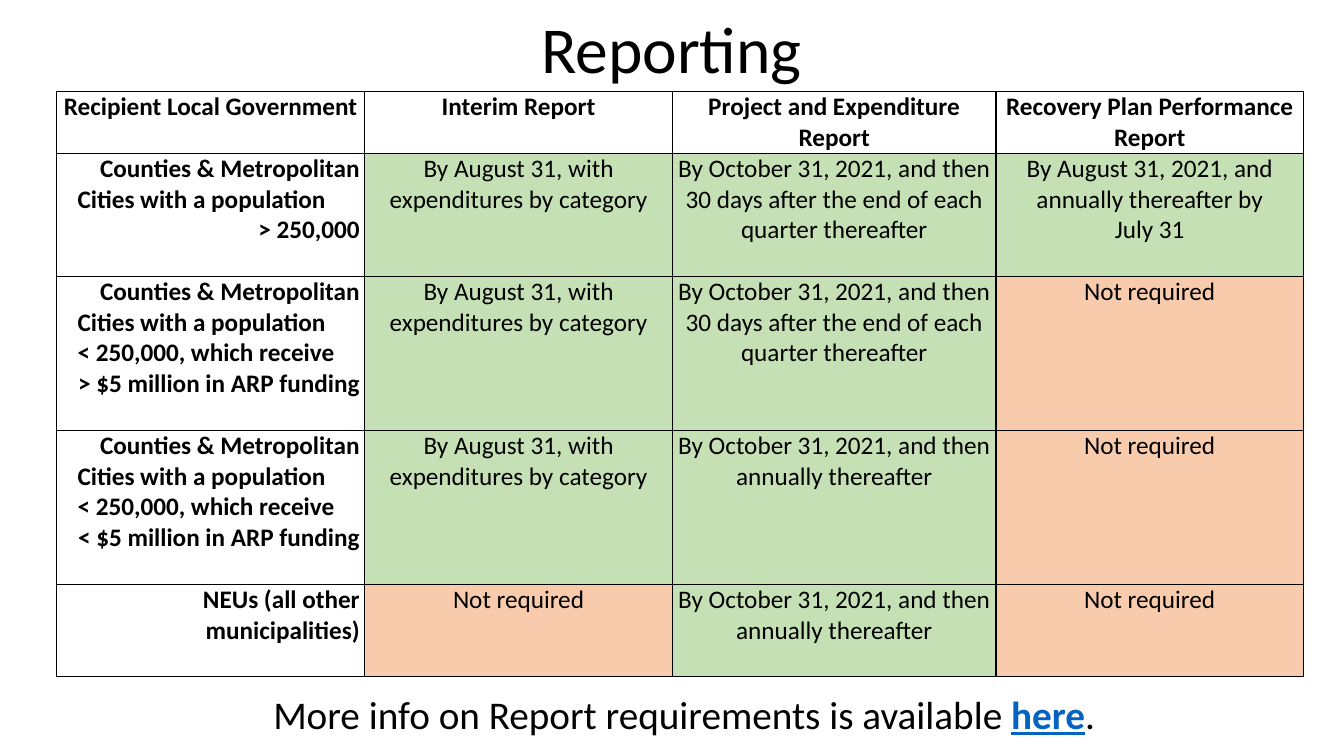
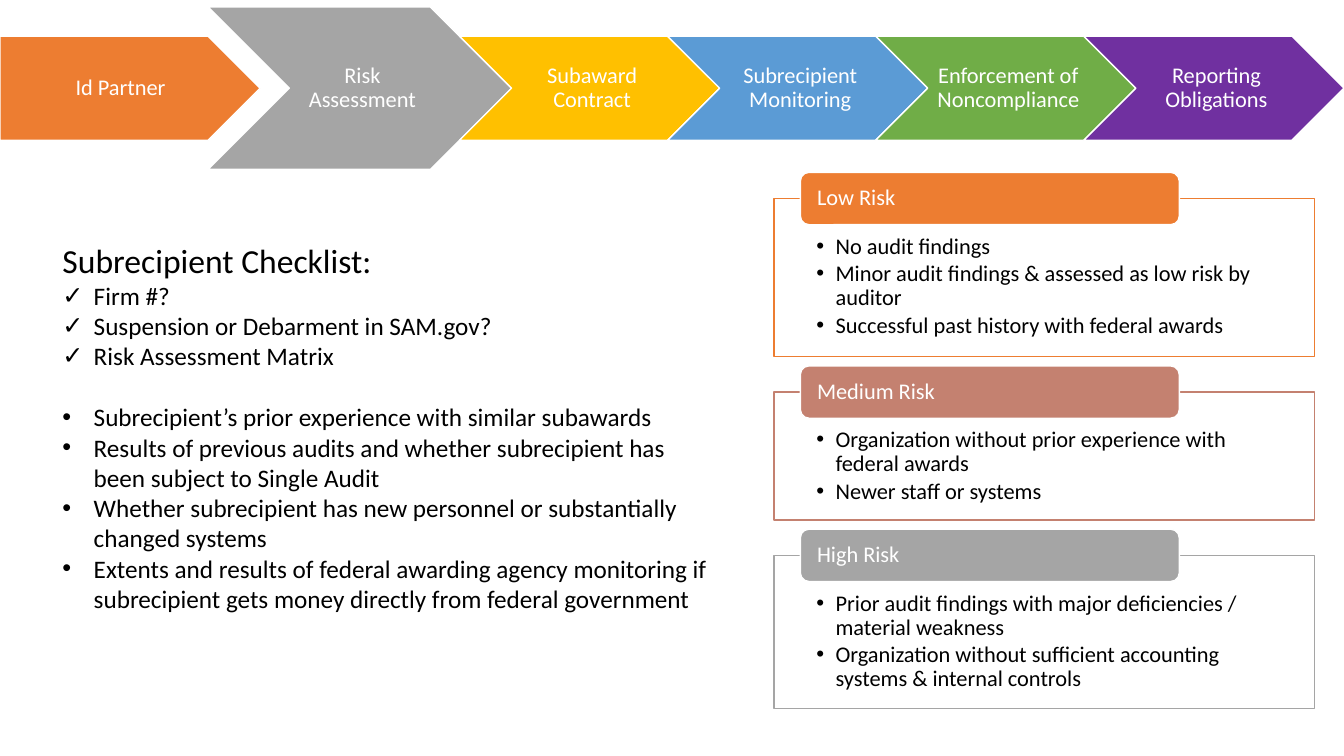
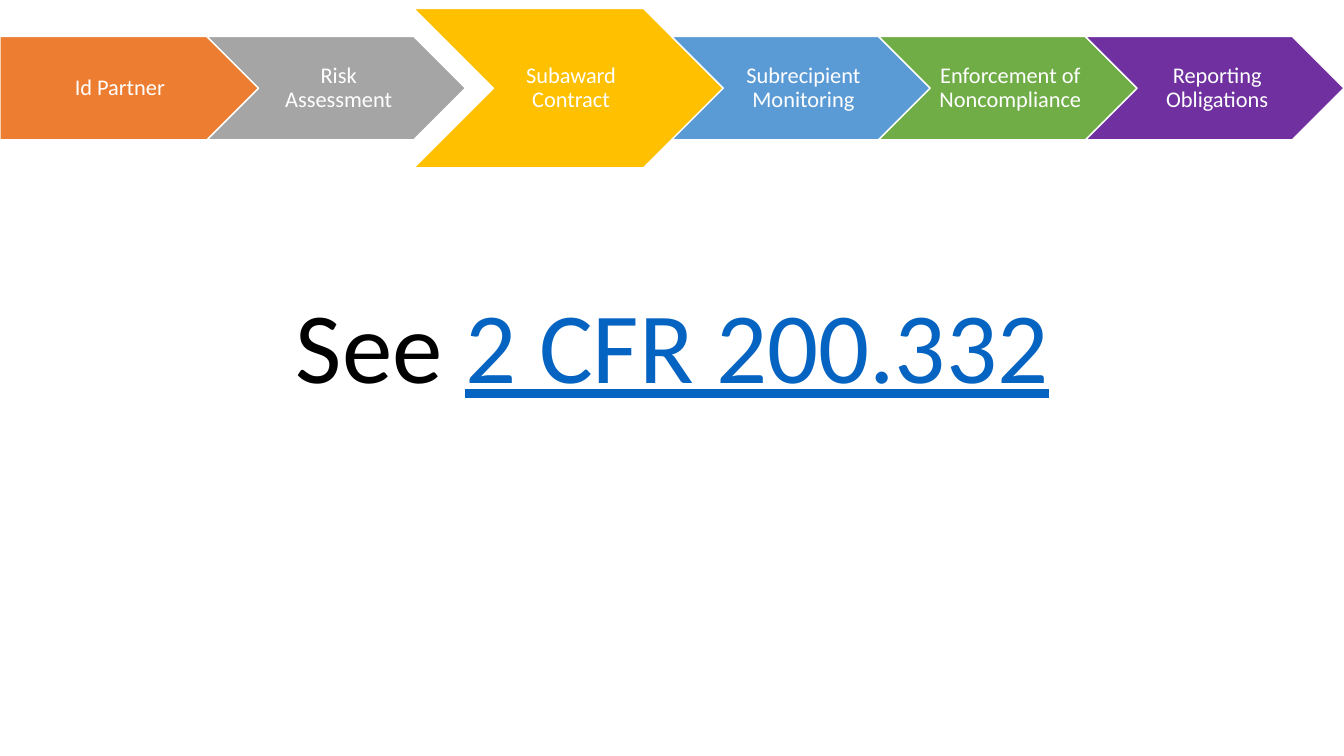
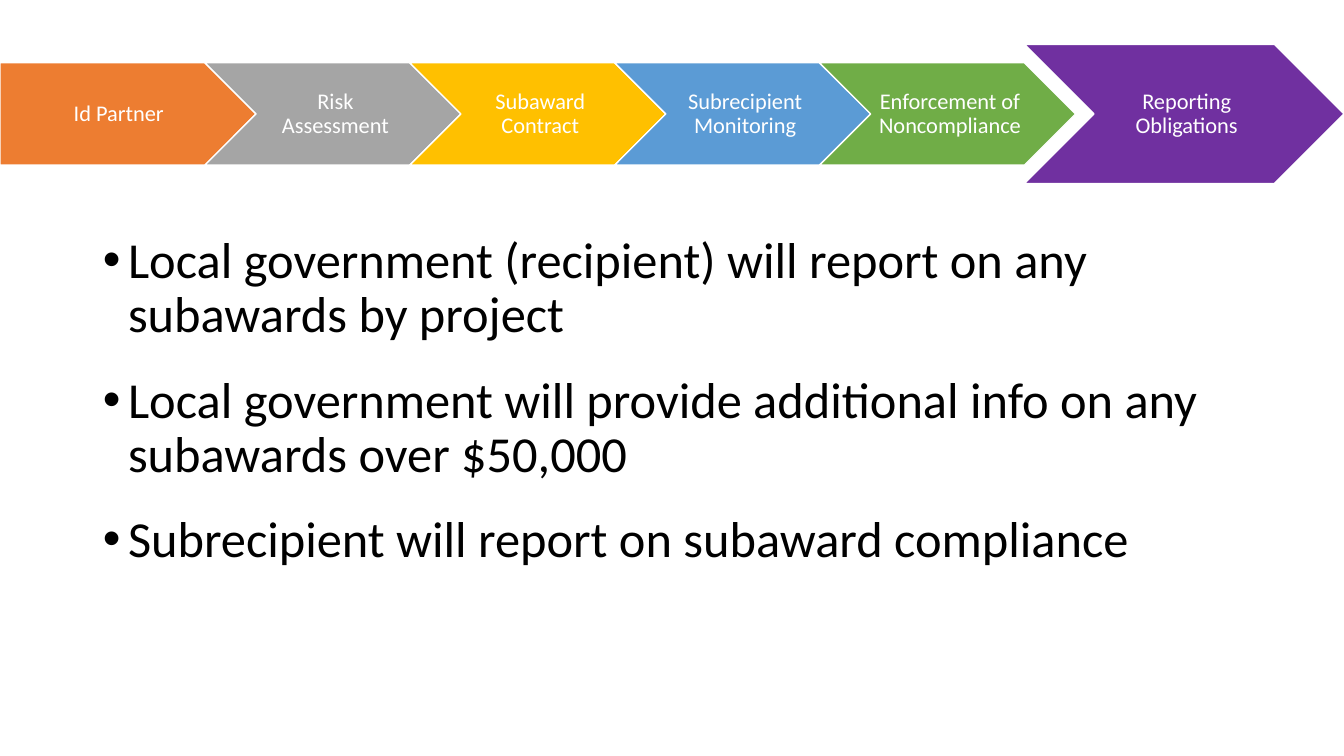
"""Builds four slides on grant reporting and subrecipient steps."""
from dataclasses import dataclass, replace

from lxml import etree
from pptx import Presentation
from pptx.dml.color import RGBColor
from pptx.enum.shapes import MSO_SHAPE
from pptx.enum.text import MSO_ANCHOR, MSO_AUTO_SIZE, PP_ALIGN
from pptx.oxml.ns import qn
from pptx.util import Emu, Inches, Pt

WIDE, HIGH = Inches(13.33), Inches(7.5)
RATIO = WIDE / HIGH
FONT = "Calibri"
BLACK, WHITE, LINK = "000000", "FFFFFF", "0563C1"
GREEN, PEACH = "C5E0B4", "F8CBAD"
ORANGE, GREY, ROSE = "ED7D31", "A5A5A5", "C48170"
LEFT, MID, RIGHT = PP_ALIGN.LEFT, PP_ALIGN.CENTER, PP_ALIGN.RIGHT
TOP, CENTRE = MSO_ANCHOR.TOP, MSO_ANCHOR.MIDDLE
PLATE, ARROW = MSO_SHAPE.PENTAGON, MSO_SHAPE.CHEVRON
RECT, ROUND = MSO_SHAPE.RECTANGLE, MSO_SHAPE.ROUNDED_RECTANGLE
FIXED = MSO_AUTO_SIZE.NONE
PAD = (0.1, 0.05, 0.1, 0.05)


@dataclass(frozen=True)
class Box:
    """Place in hundredths of the slide's width and height."""
    x: float
    y: float
    w: float
    h: float

    def emu(self) -> tuple[Emu, Emu, Emu, Emu]:
        """Give the place as slide lengths."""
        return across(self.x), down(self.y), across(self.w), down(self.h)


@dataclass(frozen=True)
class Style:
    """Look of one paragraph; gaps in points, indent in inches."""
    size: float
    color: str = BLACK
    bold: bool = False
    align: PP_ALIGN = LEFT
    lead: float = 1.0
    before: float = 0
    after: float = 0
    sign: str = ""
    indent: float = 0
    strong: bool = False


@dataclass(frozen=True)
class Line:
    """One paragraph; parts between bars look like links."""
    text: str
    style: Style


@dataclass(frozen=True)
class Step:
    """One arrow of the process row."""
    name: str
    color: str


@dataclass(frozen=True)
class Risk:
    """One risk card with its height in rows."""
    name: str
    color: str
    high: float
    items: tuple[str, ...]


STEPS = (
    Step("Id Partner", ORANGE),
    Step("Risk Assessment", GREY),
    Step("Subaward Contract", "FFC000"),
    Step("Subrecipient Monitoring", "5B9BD5"),
    Step("Enforcement of Noncompliance", "70AD47"),
    Step("Reporting Obligations", "7030A0"),
)
RISKS = (
    Risk("Low Risk", ORANGE, 20.93, (
        "No audit findings",
        "Minor audit findings & assessed as low risk by auditor",
        "Successful past history with federal awards")),
    Risk("Medium Risk", ROSE, 16.93, (
        "Organization without prior experience with federal awards",
        "Newer staff or systems")),
    Risk("High Risk", GREY, 20.27, (
        "Prior audit findings with major deficiencies / material weakness",
        "Organization without sufficient accounting systems & internal controls")),
)
CHECKS = ("Firm #?", "Suspension or Debarment in SAM.gov?", "Risk Assessment Matrix")
FACTORS = (
    "Subrecipient’s prior experience with similar subawards",
    "Results of previous audits and whether subrecipient has been subject to Single Audit",
    "Whether subrecipient has new personnel or substantially changed systems",
    "Extents and results of federal awarding agency monitoring if subrecipient "
    "gets money directly from federal government",
)
DUTIES = (
    "Local government (recipient) will report on any subawards by project",
    "Local government will provide additional info on any subawards over $50,000",
    "Subrecipient will report on subaward compliance",
)
COLS = (22.95, 22.88, 24.08, 22.88)
ROWS = (8.13, 16.27, 20.4, 20.4, 12.13)
HEADS = ("Recipient Local Government", "Interim Report",
         "Project and Expenditure Report", "Recovery Plan Performance Report")
NONE = "Not required"
AUGUST = "By August 31, with expenditures by category"
QUARTER = "By October 31, 2021, and then 30 days after the end of each quarter thereafter"
ANNUAL = "By October 31, 2021, and then annually thereafter"
PLAN = "By August 31, 2021, and annually thereafter by\vJuly 31"
CITIES = ("Counties & Metropolitan", "Cities with a population")
SMALL = CITIES + ("< 250,000, which receive",)
GRID = (
    (CITIES + ("> 250,000",), AUGUST, QUARTER, PLAN),
    (SMALL + ("> $5 million in ARP funding",), AUGUST, QUARTER, NONE),
    (SMALL + ("< $5 million in ARP funding",), AUGUST, ANNUAL, NONE),
    (("NEUs (all other municipalities)",), NONE, ANNUAL, NONE),
)


def across(share: float) -> Emu:
    """Turn hundredths of the width into a length."""
    return Emu(round(WIDE * share / 100))


def down(share: float) -> Emu:
    """Turn hundredths of the height into a length."""
    return Emu(round(HIGH * share / 100))


def rgb(code: str) -> RGBColor:
    """Turn a hex string into a colour."""
    return RGBColor.from_string(code)


def mark(par, style: Style) -> None:
    """Set the indent and bullet of a paragraph."""
    props = par._p.get_or_add_pPr()
    hang = -style.indent if style.sign else 0
    props.set("marL", str(Inches(style.indent)))
    props.set("indent", str(Inches(hang)))
    if style.sign:
        etree.SubElement(props, qn("a:buFont")).set("typeface", "Arial")
        etree.SubElement(props, qn("a:buChar")).set("char", style.sign)
    else:
        etree.SubElement(props, qn("a:buNone"))


def write(frame, lines: list[Line]) -> None:
    """Fill a text frame with styled paragraphs."""
    for i, line in enumerate(lines):
        par = frame.add_paragraph() if i else frame.paragraphs[0]
        style = line.style
        mark(par, style)
        par.alignment, par.line_spacing = style.align, style.lead
        par.space_before, par.space_after = Pt(style.before), Pt(style.after)
        font = par.font
        font.name, font.size, font.bold = FONT, Pt(style.size), style.bold
        font.color.rgb = rgb(style.color)
        if "|" not in line.text:
            par.text = line.text
            continue
        for j, part in enumerate(line.text.split("|")):
            if part:
                run = par.add_run()
                run.text = part
                if j % 2:
                    run.font.color.rgb = rgb(LINK)
                    run.font.underline = True
                    run.font.bold = style.strong


def fit(frame, pad: tuple[float, ...], anchor: MSO_ANCHOR) -> None:
    """Set wrapping, margins and anchor of a text frame."""
    frame.word_wrap, frame.auto_size = True, FIXED
    frame.vertical_anchor = anchor
    (frame.margin_left, frame.margin_top,
     frame.margin_right, frame.margin_bottom) = map(Inches, pad)


def block(shape, box: Box, lines: list[Line], anchor: MSO_ANCHOR = TOP) -> None:
    """Move and fill a placeholder or text box."""
    shape.left, shape.top, shape.width, shape.height = box.emu()
    fit(shape.text_frame, PAD, anchor)
    write(shape.text_frame, lines)


def form(slide, kind: MSO_SHAPE, box: Box, fill: str, edge: str,
         lines: list[Line], pad: tuple[float, ...], anchor: MSO_ANCHOR) -> None:
    """Draw a filled shape with its text."""
    shape = slide.shapes.add_shape(kind, *box.emu())
    shape.shadow.inherit = False
    shape.fill.solid()
    shape.fill.fore_color.rgb = rgb(fill)
    shape.line.color.rgb = rgb(edge)
    shape.line.width = Pt(1)
    fit(shape.text_frame, pad, anchor)
    write(shape.text_frame, lines)


def flow(slide, pick: int, wide: float, high: float, axis: float) -> None:
    """Draw the process row with one larger arrow."""
    base = (100 - wide) / 4
    left = 0.0
    style = Style(16, WHITE, align=MID, lead=0.9)
    for i, step in enumerate(STEPS):
        w, h = (wide, high) if i == pick else (base, 0.4 * base * RATIO)
        kind, edge = (ARROW, 0.07) if i else (PLATE, 0.09)
        form(slide, kind, Box(left, axis - h / 2, w, h), step.color, WHITE,
             [Line(step.name, style)], (edge, 0.05, 0.02, 0.05), CENTRE)
        left += w - 0.2 * base


def cards(slide) -> None:
    """Draw the risk cards one below the other."""
    item = Style(16, lead=0.9, after=2.4, sign="•", indent=0.19)
    label = Style(16, WHITE, lead=0.9)
    left, top, gap = 57.6, 26.27, 4.67
    for risk in RISKS:
        form(slide, RECT, Box(left, top, 40.2, risk.high), WHITE, risk.color,
             [Line(text, item) for text in risk.items],
             (0.42, 0.36, 0.42, 0.12), TOP)
        form(slide, ROUND, Box(left + 1.95, top - 3.47, 28.2, 6.93),
             risk.color, WHITE, [Line(risk.name, label)], (0.14, 0, 0.14, 0), CENTRE)
        top += risk.high + gap


def border(cell) -> None:
    """Give a cell thin black edges."""
    props = cell._tc.get_or_add_tcPr()
    for side in ("a:lnL", "a:lnR", "a:lnT", "a:lnB"):
        edge = etree.SubElement(props, qn(side), w=str(Pt(1)))
        fill = etree.SubElement(edge, qn("a:solidFill"))
        etree.SubElement(fill, qn("a:srgbClr"), val=BLACK)


def fill_cell(cell, lines: list[Line], fill: str) -> None:
    """Format and fill one table cell."""
    border(cell)
    cell.fill.solid()
    cell.fill.fore_color.rgb = rgb(fill)
    cell.margin_left = cell.margin_right = Inches(0.05)
    cell.margin_top = cell.margin_bottom = 0
    write(cell.text_frame, lines)


def label(texts: tuple[str, ...]) -> list[Line]:
    """Set outer lines to the right and inner ones on an indent."""
    outer = Style(18, bold=True, align=RIGHT)
    inner = replace(outer, align=LEFT, indent=0.16)
    ends = (0, len(texts) - 1)
    return [Line(text, outer if i in ends else inner)
            for i, text in enumerate(texts)]


def table(slide) -> None:
    """Draw the table of due dates."""
    box = Box(4.2, 12.13, sum(COLS), sum(ROWS))
    grid = slide.shapes.add_table(len(ROWS), len(COLS), *box.emu()).table
    grid.first_row = grid.horz_banding = False
    for col, share in zip(grid.columns, COLS):
        col.width = across(share)
    for row, share in zip(grid.rows, ROWS):
        row.height = down(share)
    plain = Style(18, align=MID)
    head = replace(plain, bold=True)
    for c, text in enumerate(HEADS):
        fill_cell(grid.cell(0, c), [Line(text, head)], WHITE)
    for r, (names, *dates) in enumerate(GRID, 1):
        fill_cell(grid.cell(r, 0), label(names), WHITE)
        for c, text in enumerate(dates, 1):
            fill_cell(grid.cell(r, c), [Line(text, plain)],
                      PEACH if text == NONE else GREEN)


def page(deck, box: Box, lines: list[Line]):
    """Add a slide whose body holds the lines and which has no title."""
    slide = deck.slides.add_slide(deck.slide_layouts[1])
    title = slide.shapes.title._element
    title.getparent().remove(title)
    block(slide.placeholders[1], box, lines)
    return slide


def report(deck) -> None:
    """Build the slide of reports and due dates."""
    slide = deck.slides.add_slide(deck.slide_layouts[5])
    block(slide.shapes.title, Box(6.83, 1.6, 86.25, 10.53),
          [Line("Reporting", Style(46.8, align=MID, lead=0.9))], CENTRE)
    table(slide)
    box = Box(4.2, 90.67, 93.4, 7.6)
    note = "More info on Report requirements is available |here|."
    block(slide.shapes.add_textbox(*box.emu()), box,
          [Line(note, Style(28, align=MID, strong=True))])


def assess(deck) -> None:
    """Build the slide of checks and risks."""
    tick = Style(18, sign="✓", indent=0.31)
    dot = replace(tick, sign="•")
    lines = [Line("Subrecipient Checklist:", Style(24))]
    lines += [Line(text, tick) for text in CHECKS]
    lines += [Line(text, dot if i else replace(dot, before=22))
              for i, text in enumerate(FACTORS)]
    slide = page(deck, Box(3.9, 31.07, 49.8, 51.2), lines)
    flow(slide, 1, 22.58, 21.47, 11.67)
    cards(slide)


def award(deck) -> None:
    """Build the slide that names the rule."""
    style = Style(72, align=MID, lead=0.9, before=10)
    slide = page(deck, Box(6.9, 38.53, 86.25, 51.47),
                 [Line("See |2 CFR 200.332|", style)])
    flow(slide, 2, 23.03, 21.07, 11.67)


def duty(deck) -> None:
    """Build the slide of reporting duties."""
    style = Style(36, lead=0.9, before=22, sign="•", indent=0.25)
    slide = page(deck, Box(6.9, 30.4, 86.25, 59.6),
                 [Line(text, style) for text in DUTIES])
    flow(slide, 5, 23.78, 18.4, 15.07)


def main() -> None:
    """Build and save the deck."""
    deck = Presentation()
    deck.slide_width, deck.slide_height = WIDE, HIGH
    for build in (report, assess, award, duty):
        build(deck)
    deck.save("out.pptx")


if __name__ == "__main__":
    main()
